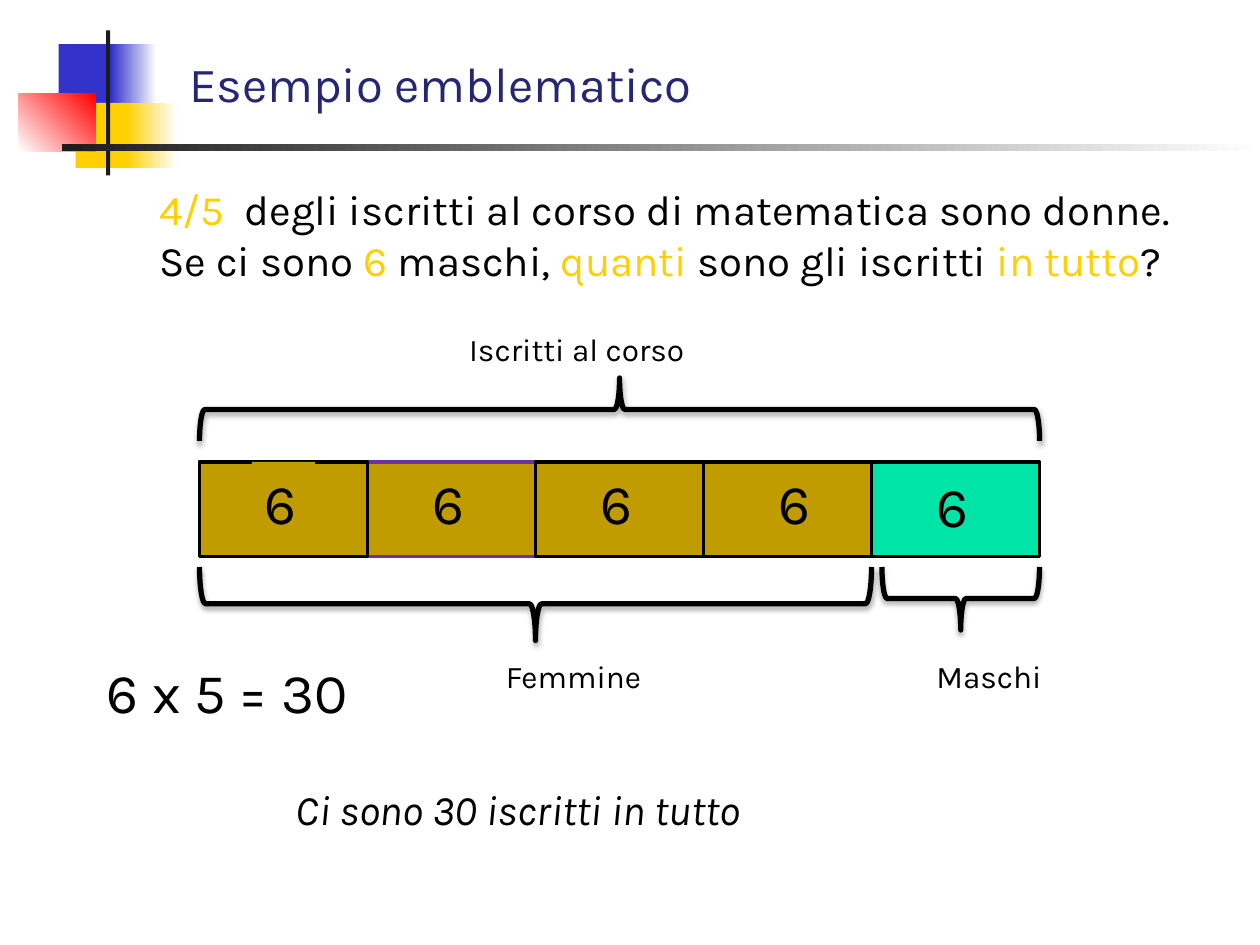
from lxml import etree
from pptx import Presentation
from pptx.dml.color import RGBColor
from pptx.enum.shapes import MSO_SHAPE
from pptx.enum.text import MSO_ANCHOR, MSO_AUTO_SIZE, PP_ALIGN
from pptx.oxml.ns import qn
from pptx.util import Inches, Pt

RECTANGLE = MSO_SHAPE.RECTANGLE
BRACE = MSO_SHAPE.LEFT_BRACE
LEFT = PP_ALIGN.LEFT
TOP = MSO_ANCHOR.TOP
GROW = MSO_AUTO_SIZE.SHAPE_TO_FIT_TEXT

BLACK = RGBColor(0x00, 0x00, 0x00)
WHITE = RGBColor(0xFF, 0xFF, 0xFF)
CHARCOAL = RGBColor(0x1C, 0x1C, 0x1C)
NAVY = RGBColor(0x26, 0x26, 0x73)
BLUE = RGBColor(0x33, 0x33, 0xCC)
YELLOW = RGBColor(0xFF, 0xCF, 0x01)
RED = RGBColor(0xFF, 0x00, 0x00)
OCHRE = RGBColor(0xC0, 0x9C, 0x00)
TEAL = RGBColor(0x00, 0xE4, 0xA8)
PURPLE = RGBColor(0x70, 0x30, 0xA0)

FONT = "Karla"
COLUMNS, ROWS = 120, 90
BAR_LEFT, BAR_TOP, BAR_HEIGHT = 19, 44, 9
PART_WIDTH, PART_COUNT = 16, 5
BAR_WIDTH = PART_WIDTH * PART_COUNT


def write_text(shape, runs, size=18, color=BLACK, italic=False):
    frame = shape.text_frame
    frame.word_wrap = True
    frame.auto_size = GROW
    frame.vertical_anchor = TOP
    paragraph = frame.paragraphs[0]
    paragraph.alignment = LEFT
    for text, run_color in [(runs, color)] if isinstance(runs, str) else runs:
        run = paragraph.add_run()
        run.text = text
        run.font.name = FONT
        run.font.size = Pt(size)
        run.font.italic = italic
        run.font.color.rgb = run_color


class SlideBuilder:
    def __init__(self, presentation):
        self.slide = presentation.slides.add_slide(presentation.slide_layouts[5])
        self.column = presentation.slide_width / COLUMNS
        self.row = presentation.slide_height / ROWS

    def area(self, left, top, width, height):
        return (round(left * self.column), round(top * self.row),
                round(width * self.column), round(height * self.row))

    def title(self, text, *area):
        title = self.slide.shapes.title
        title.left, title.top, title.width, title.height = self.area(*area)
        write_text(title, text, size=28, color=NAVY)

    def text(self, runs, *area, **style):
        box = self.slide.shapes.add_textbox(*self.area(*area))
        write_text(box, runs, **style)

    def rectangle(self, *area, fill, fade=None, angle=0, line=None, group=None):
        shapes = (group or self.slide).shapes
        shape = shapes.add_shape(RECTANGLE, *self.area(*area))
        shape.shadow.inherit = False
        if fade is None:
            shape.fill.solid()
            shape.fill.fore_color.rgb = fill
        else:
            shape.fill.gradient()
            shape.fill.gradient_angle = angle
            for stop, color in zip(shape.fill.gradient_stops, (fill, fade)):
                stop.color.rgb = color
        if line is None:
            shape.line.fill.background()
        else:
            shape.line.color.rgb = line
            shape.line.width = Pt(2)
        return shape

    def brace(self, left, top, width, height, rotation):
        turned = (left + (width - height) / 2, top + (height - width) / 2, height, width)
        shape = self.slide.shapes.add_shape(BRACE, *self.area(*turned))
        shape.rotation = rotation
        shape.fill.background()
        shape.line.color.rgb = BLACK
        shape.line.width = Pt(3)
        shape.shadow.inherit = False
        effects = shape.element.spPr.find(qn("a:effectLst"))
        shadow = etree.SubElement(effects, qn("a:outerShdw"), blurRad="40000",
                                  dist="23000", dir="5400000", rotWithShape="0")
        color = etree.SubElement(shadow, qn("a:srgbClr"), val=str(BLACK))
        etree.SubElement(color, qn("a:alpha"), val="35000")

    def ornament(self):
        group = self.slide.shapes.add_group_shape()
        for area, fill, fade, angle in (
            ((5.6, 4.2, 5.8, 6.2), BLUE, None, 0),
            ((10.6, 4.2, 4.3, 6.2), BLUE, WHITE, 0),
            ((7.2, 9.8, 5.5, 6.2), YELLOW, None, 0),
            ((12, 9.8, 4.8, 6.2), YELLOW, WHITE, 0),
            ((1.8, 8.9, 7.3, 5.5), WHITE, RED, 45),
            ((10.1, 2.9, 0.4, 13.8), CHARCOAL, None, 0),
            ((5.9, 13.7, 114.1, 0.7), CHARCOAL, WHITE, 0),
        ):
            self.rectangle(*area, fill=fill, fade=fade, angle=angle, group=group)


def main():
    presentation = Presentation()
    presentation.slide_width = Inches(10)
    presentation.slide_height = Inches(7.5)
    builder = SlideBuilder(presentation)

    builder.title("Esempio emblematico", 16.8, 4.45, 51.85, 6.85)
    builder.text(
        [("4/5  ", YELLOW),
         ("degli iscritti al corso di matematica sono donne. Se ci sono ", BLACK),
         ("6 ", YELLOW), ("maschi, ", BLACK), ("quanti ", YELLOW),
         ("sono gli iscritti ", BLACK), ("in tutto", YELLOW), ("?", BLACK)],
        14, 16.9, 100, 10.9, size=24)

    builder.rectangle(BAR_LEFT, BAR_TOP, BAR_WIDTH, BAR_HEIGHT, fill=TEAL, line=BLACK)
    for part, line in ((1, PURPLE), (2, BLACK), (0, BLACK), (3, BLACK)):
        builder.rectangle(BAR_LEFT + part * PART_WIDTH, BAR_TOP, PART_WIDTH, BAR_HEIGHT,
                          fill=OCHRE, line=line)

    builder.brace(BAR_LEFT, 36, BAR_WIDTH, 6, 90)
    builder.brace(BAR_LEFT, 54, 4 * PART_WIDTH, 7, 270)
    builder.brace(84, 54, 15, 6, 270)
    builder.text("Iscritti al corso", 43.5, 30.85, 34, 4.85)
    builder.text("Femmine", 47, 62, 21, 4.85)
    builder.text("Maschi", 88, 62, 16, 4.85)

    first_value = builder.rectangle(24, BAR_TOP, 6, 7.7, fill=OCHRE)
    write_text(first_value, "6", size=32)
    for left, top, width in ((40, 44, 5.4), (56, 44, 6), (73, 44, 4), (88, 44.3, 6)):
        builder.text("6", left, top, width, 7.7, size=32)

    builder.text("6 x 5 = 30", 9, 62, 29, 7.7, size=32)
    builder.text("Ci sono 30 iscritti in tutto", 27, 74, 62, 6.1, size=24, italic=True)
    builder.ornament()
    presentation.save("out.pptx")


if __name__ == "__main__":
    main()
